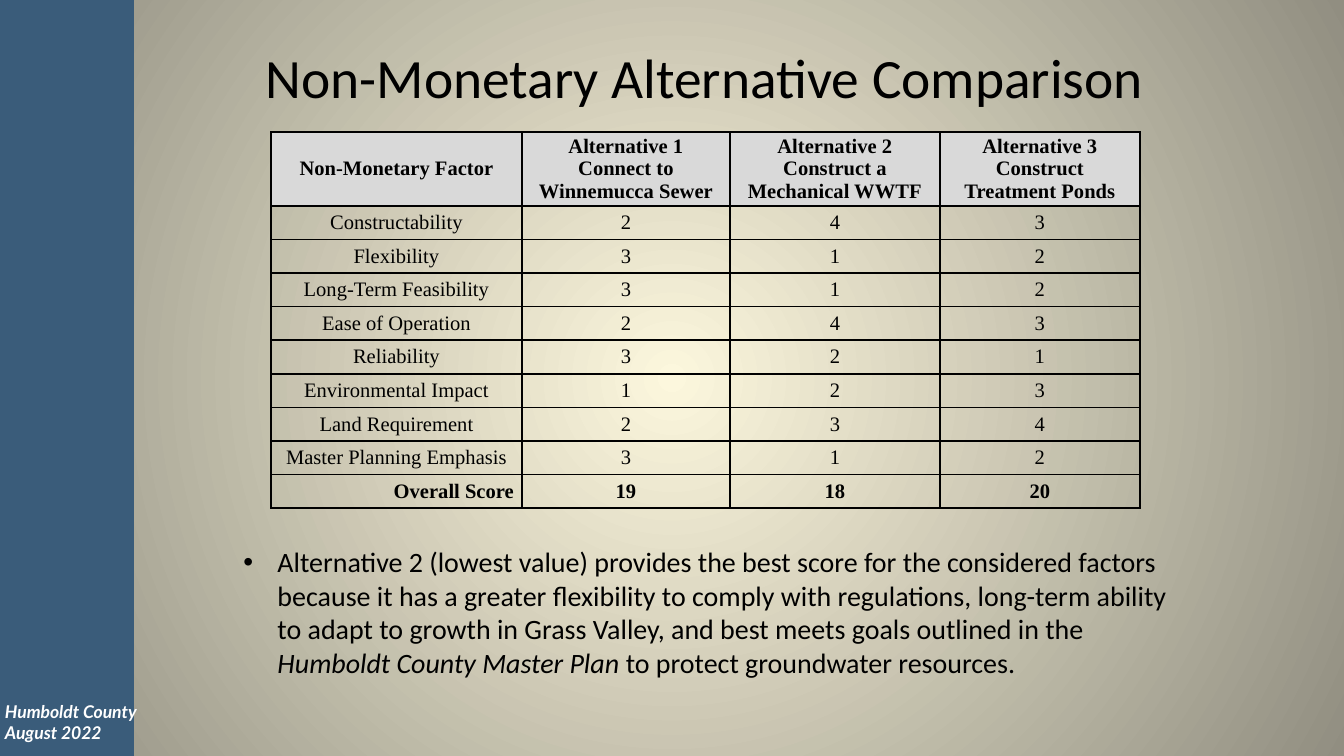
from lxml.etree import SubElement
from pptx import Presentation
from pptx.dml.color import RGBColor
from pptx.enum.shapes import MSO_SHAPE as SHAPE
from pptx.enum.text import MSO_ANCHOR as ANCHOR, MSO_AUTO_SIZE as AUTO, PP_ALIGN as ALIGN
from pptx.oxml import parse_xml
from pptx.oxml.ns import nsdecls, qn
from pptx.util import Pt

COLORS = {"center": "FCF7DD", "edge": "918E81", "band": "3A5C7A",
          "header": "D9D9D9", "ink": "000000", "white": "FFFFFF"}


def px(*lengths):
    emu = [round(n * 914400 / 134.4) for n in lengths]
    return emu if len(emu) > 1 else emu[0]


def add_run(paragraph, text, size, font, color="ink", bold=False, italic=False):
    run = paragraph.add_run()
    run.text = text
    run.font.size = Pt(size)
    run.font.name = font
    run.font.bold = bold
    run.font.italic = italic
    run.font.color.rgb = RGBColor.from_string(COLORS[color])


prs = Presentation()
prs.slide_width, prs.slide_height = px(1344, 756)
slide = prs.slides.add_slide(prs.slide_layouts[1])

slide.background.fill.solid()
bg_pr = slide.background._cSld.bg.bgPr
bg_pr.replace(bg_pr[0], parse_xml(
    f'<a:gradFill {nsdecls("a")} rotWithShape="1"><a:gsLst>'
    f'<a:gs pos="0"><a:srgbClr val="{COLORS["center"]}"/></a:gs>'
    f'<a:gs pos="100000"><a:srgbClr val="{COLORS["edge"]}"/></a:gs></a:gsLst>'
    '<a:path path="circle"><a:fillToRect l="50000" t="50000" r="50000" b="50000"/></a:path>'
    '</a:gradFill>'))

band = slide.shapes.add_shape(SHAPE.RECTANGLE, *px(0, 0, 134, 756))
band.shadow.inherit = False
band.fill.solid()
band.fill.fore_color.rgb = RGBColor.from_string(COLORS["band"])
band.line.fill.background()

footer = slide.shapes.add_textbox(*px(5, 694, 151, 47)).text_frame
footer.word_wrap = True
footer.margin_left = 0
for i, line in enumerate(["Humboldt County", "August 2022"]):
    paragraph = footer.add_paragraph() if i else footer.paragraphs[0]
    add_run(paragraph, line, 9.4, "Lato", "white", bold=True, italic=True)

title = slide.shapes.title
title.left, title.top, title.width, title.height = px(134, 13, 1142, 126)
title.text_frame.auto_size = AUTO.NONE
title.text_frame.vertical_anchor = ANCHOR.MIDDLE
heading = title.text_frame.paragraphs[0]
heading.alignment = ALIGN.CENTER
add_run(heading, "Non-Monetary Alternative Comparison", 29.7, "Calibri")

scores = [
    ["Non-Monetary Factor", "Alternative 1\nConnect to Winnemucca Sewer",
     "Alternative 2\nConstruct a Mechanical WWTF", "Alternative 3\nConstruct Treatment Ponds"],
    ["Constructability", "2", "4", "3"],
    ["Flexibility", "3", "1", "2"],
    ["Long-Term Feasibility", "3", "1", "2"],
    ["Ease of Operation", "2", "4", "3"],
    ["Reliability", "3", "2", "1"],
    ["Environmental Impact", "1", "2", "3"],
    ["Land Requirement", "2", "3", "4"],
    ["Master Planning Emphasis", "3", "1", "2"],
    ["Overall Score", "19", "18", "20"],
]
last = len(scores) - 1
widths = [251, 208, 210, 200]
comparison = slide.shapes.add_table(
    len(scores), len(widths), *px(271, 132, sum(widths), 370)).table
for column, width in zip(comparison.columns, widths):
    column.width = px(width)
for r, row in enumerate(scores):
    comparison.rows[r].height = px(302) // last if r else px(68)
    for c, text in enumerate(row):
        cell = comparison.cell(r, c)
        cell.vertical_anchor = ANCHOR.MIDDLE
        cell.margin_left = cell.margin_right = px(8)
        cell.margin_top = cell.margin_bottom = 0
        for i, line in enumerate(text.split("\n")):
            paragraph = cell.text_frame.add_paragraph() if i else cell.text_frame.paragraphs[0]
            paragraph.alignment = ALIGN.RIGHT if r == last and c == 0 else ALIGN.CENTER
            add_run(paragraph, line, 11, "Times New Roman", bold=r in (0, last))
        tc_pr = cell._tc.get_or_add_tcPr()
        for side in ("a:lnL", "a:lnR", "a:lnT", "a:lnB"):
            border = SubElement(tc_pr, qn(side), w=str(Pt(1)))
            SubElement(SubElement(border, qn("a:solidFill")), qn("a:srgbClr"), val=COLORS["ink"])
        if r == 0:
            cell.fill.solid()
            cell.fill.fore_color.rgb = RGBColor.from_string(COLORS["header"])
        else:
            cell.fill.background()

conclusion = slide.placeholders[1]
conclusion.left, conclusion.top, conclusion.width, conclusion.height = px(230, 538, 952, 176)
conclusion.text_frame.auto_size = AUTO.NONE
bullet = conclusion.text_frame.paragraphs[0]
bullet_pr = bullet._p.get_or_add_pPr()
bullet_pr.set("marL", str(px(34)))
bullet_pr.set("indent", str(px(-34)))
SubElement(bullet_pr, qn("a:buChar"), char="•")
bullet.space_before = Pt(0)
add_run(bullet, "Alternative 2 (lowest value) provides the best score for the considered factors "
        "because it has a greater flexibility to comply with regulations, long-term ability "
        "to adapt to growth in Grass Valley, and best meets goals outlined in the ", 15, "Calibri")
add_run(bullet, "Humboldt County Master Plan ", 15, "Calibri", italic=True)
add_run(bullet, "to protect groundwater resources.", 15, "Calibri")

prs.save("out.pptx")
